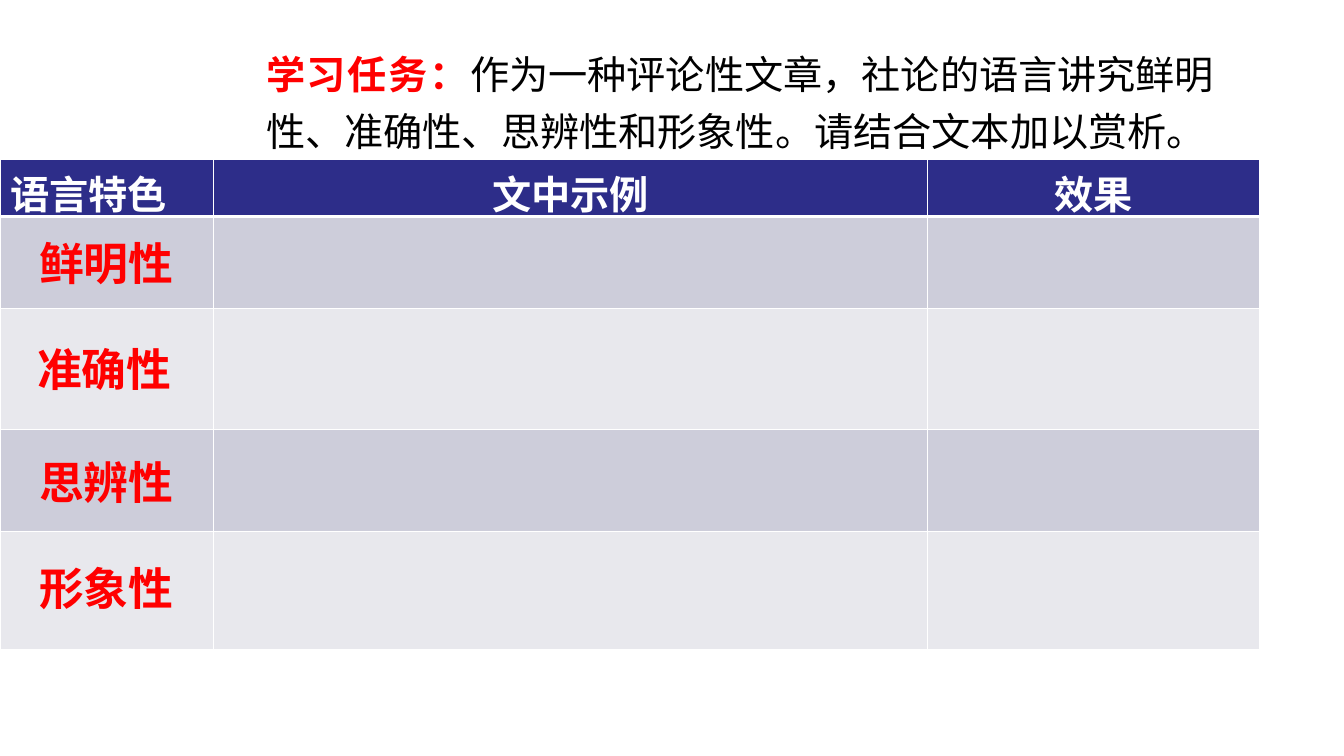
from lxml import etree
from pptx import Presentation
from pptx.dml.color import RGBColor
from pptx.enum.text import MSO_ANCHOR, MSO_AUTO_SIZE, PP_ALIGN
from pptx.oxml.ns import qn
from pptx.util import Inches, Pt

LEFT, CENTER = PP_ALIGN.LEFT, PP_ALIGN.CENTER
TOP = MSO_ANCHOR.TOP
GROW = MSO_AUTO_SIZE.SHAPE_TO_FIT_TEXT

COLORS = {
    "header": "2D2D89",
    "odd": "CDCDDA",
    "even": "E8E8ED",
    "accent": "FF0000",
    "white": "FFFFFF",
    "black": "000000",
}
LATIN, CJK = "Arial", "Noto Sans CJK SC"
TITLE_ONLY = 5

HEADERS = ["语言特色", "文中示例", "效果"]
COLUMN_SHARES = [16.97, 56.68, 26.35]
ROW_SHARES = [11.16, 18.8, 24.79, 21.07, 24.18]
LABELS = [
    ("鲜明性", 2.32, 14.67),
    ("准确性", 2.16, 36.36),
    ("思辨性", 2.32, 59.5),
    ("形象性", 2.32, 81.2),
]
LABEL_SIZE = (12.41, 13.22)


def rgb(name):
    return RGBColor.from_string(COLORS[name])


def within(box, x, y, w, h):
    left, top, width, height = box
    return (
        int(left + width * x / 100),
        int(top + height * y / 100),
        int(width * w / 100),
        int(height * h / 100),
    )


def add_text(p, text, size=28, font=CJK, color="black", bold=False, align=LEFT, spacing=0):
    p.alignment = align
    r = p.add_run()
    r.text = text
    r.font.size = Pt(size)
    r.font.bold = bold
    r.font.name = font
    r.font.color.rgb = rgb(color)
    rPr = r._r.get_or_add_rPr()
    rPr.set("spc", str(int(spacing * 100)))
    ea = etree.SubElement(rPr, qn("a:ea"))
    ea.set("typeface", CJK)


def set_borders(cell, bottom):
    tcPr = cell._tc.get_or_add_tcPr()
    widths = {"L": 1, "R": 1, "T": 1, "B": bottom}
    for i, (side, width) in enumerate(widths.items()):
        ln = etree.Element(qn(f"a:ln{side}"), w=str(Pt(width)))
        fill = etree.SubElement(ln, qn("a:solidFill"))
        etree.SubElement(fill, qn("a:srgbClr"), val=COLORS["white"])
        tcPr.insert(i, ln)


def add_task(s, box):
    title = s.shapes.title
    title.left, title.top, title.width, title.height = box
    tf = title.text_frame
    tf.word_wrap = True
    tf.auto_size = GROW
    tf.vertical_anchor = TOP
    p = tf.paragraphs[0]
    p.line_spacing = 1.2
    p.space_after = Pt(8)
    add_text(p, "学习任务：", color="accent", bold=True, spacing=1.2)
    add_text(p, "作为一种评论性文章，社论的语言讲究鲜明性、准确性、思辨性和形象性。请结合文本加以赏析。", font=LATIN)


def add_grid(s, box):
    table = s.shapes.add_table(len(ROW_SHARES), len(COLUMN_SHARES), *box).table
    for column, share in zip(table.columns, COLUMN_SHARES):
        column.width = int(box[2] * share / 100)
    for i, (row, share) in enumerate(zip(table.rows, ROW_SHARES)):
        row.height = int(box[3] * share / 100)
        fill = "header" if i == 0 else "odd" if i % 2 else "even"
        for cell in row.cells:
            cell.fill.solid()
            cell.fill.fore_color.rgb = rgb(fill)
            set_borders(cell, bottom=1 if i else 3)
    for i, text in enumerate(HEADERS):
        p = table.cell(0, i).text_frame.paragraphs[0]
        add_text(p, text, font=LATIN, color="white", bold=True, align=CENTER if i else LEFT)


def add_labels(s, box):
    for text, x, y in LABELS:
        tf = s.shapes.add_textbox(*within(box, x, y, *LABEL_SIZE)).text_frame
        tf.word_wrap = False
        tf.auto_size = GROW
        add_text(tf.paragraphs[0], text, size=32, color="accent", bold=True)


def main():
    prs = Presentation()
    prs.slide_width, prs.slide_height = Inches(13.33), Inches(7.5)
    s = prs.slides.add_slide(prs.slide_layouts[TITLE_ONLY])
    page = (0, 0, prs.slide_width, prs.slide_height)
    table_box = within(page, 0, 21.07, 93.7, 64.53)
    add_grid(s, table_box)
    add_labels(s, table_box)
    add_task(s, within(page, 19.05, 4.8, 74.64, 15.47))
    prs.save("out.pptx")


if __name__ == "__main__":
    main()
